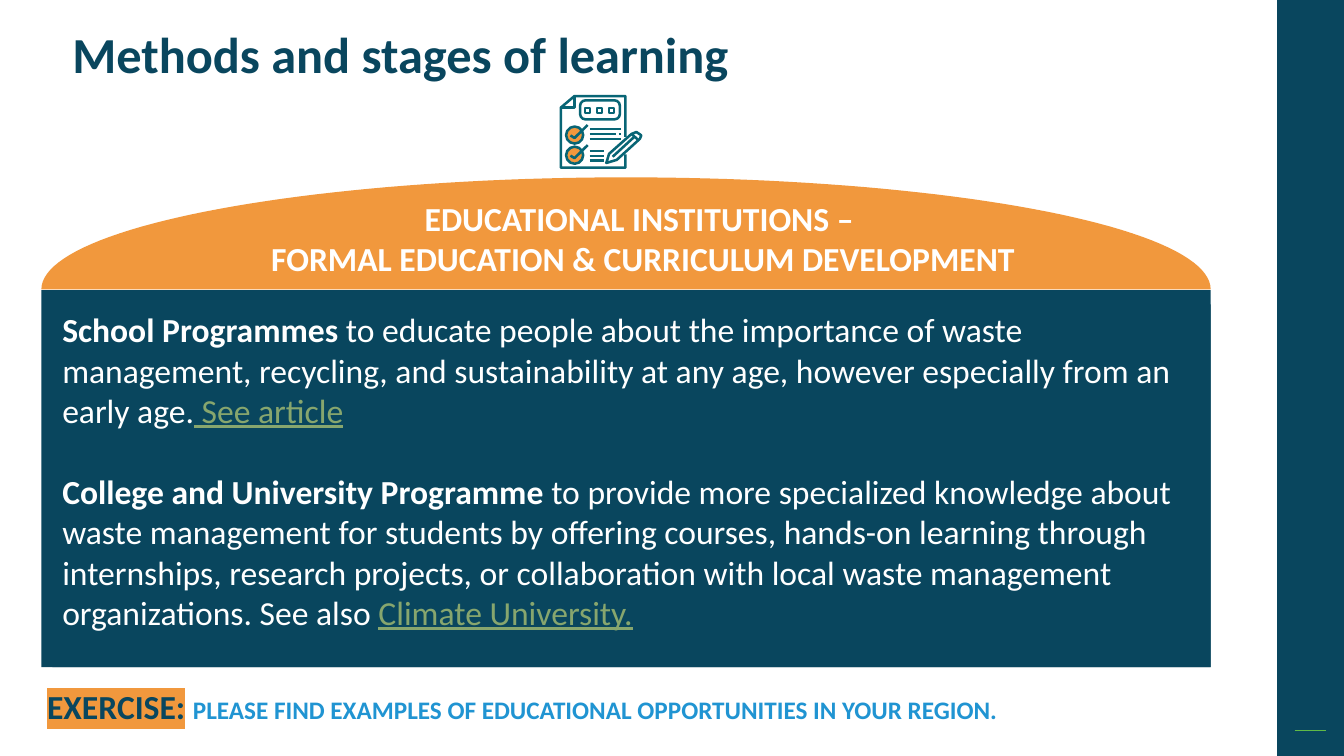
from dataclasses import dataclass
from math import cos, pi, sin

from lxml import etree
from pptx import Presentation
from pptx.dml.color import RGBColor
from pptx.enum.shapes import MSO_CONNECTOR, MSO_SHAPE
from pptx.enum.text import MSO_ANCHOR, PP_ALIGN
from pptx.oxml.ns import qn
from pptx.util import Pt

NAVY = RGBColor(0x09, 0x46, 0x5E)
ORANGE = RGBColor(0xF1, 0x98, 0x3D)
TEAL = RGBColor(0x08, 0x65, 0x75)
SAGE = RGBColor(0x87, 0xA6, 0x6E)
GREEN = RGBColor(0x60, 0xBA, 0x47)
BLUE = RGBColor(0x20, 0x94, 0xD2)
WHITE = RGBColor(0xFF, 0xFF, 0xFF)
RECT, ROUNDED, OVAL = MSO_SHAPE.RECTANGLE, MSO_SHAPE.ROUNDED_RECTANGLE, MSO_SHAPE.OVAL
STRAIGHT = MSO_CONNECTOR.STRAIGHT
LEFT, CENTER = PP_ALIGN.LEFT, PP_ALIGN.CENTER
TOP, MIDDLE = MSO_ANCHOR.TOP, MSO_ANCHOR.MIDDLE
FONT = "Calibri"
ICON_X, ICON_Y = 399.6, 67.7


@dataclass
class Span:
    text: str
    color: RGBColor = WHITE
    bold: bool = True
    size: float = 24
    underline: bool = False
    highlight: RGBColor | None = None


@dataclass
class Stroke:
    points: list[tuple[float, float]]
    closed: bool = False


def paint(sp, fill: RGBColor | None, line: RGBColor | None = None, width: float = 1.8) -> None:
    sp.shadow.inherit = False
    if fill is None:
        sp.fill.background()
    else:
        sp.fill.solid()
        sp.fill.fore_color.rgb = fill
    if line is None:
        sp.line.fill.background()
    else:
        sp.line.color.rgb = line
        sp.line.width = Pt(width)


def add_box(shapes, kind, x: float, y: float, w: float, h: float,
            fill: RGBColor | None, line: RGBColor | None = None, width: float = 1.8):
    sp = shapes.add_shape(kind, Pt(x), Pt(y), Pt(w), Pt(h))
    paint(sp, fill, line, width)
    return sp


def add_line(shapes, x1: float, y1: float, x2: float, y2: float,
             color: RGBColor, width: float) -> None:
    line = shapes.add_connector(STRAIGHT, Pt(x1), Pt(y1), Pt(x2), Pt(y2))
    line.line.color.rgb = color
    line.line.width = Pt(width)
    etree.SubElement(line._element.spPr, qn("a:effectLst"))


def add_path(shapes, points: list[tuple[float, float]], closed: bool):
    pts = [(Pt(x), Pt(y)) for x, y in points]
    builder = shapes.build_freeform(*pts[0])
    builder.add_line_segments(pts[1:], close=closed)
    return builder.convert_to_shape()


def write(sp, paragraphs: list[list[Span]], align=LEFT, anchor=TOP, gap: float = 0) -> None:
    tf = sp.text_frame
    tf.word_wrap = True
    tf.vertical_anchor = anchor
    for i, spans in enumerate(paragraphs):
        p = tf.paragraphs[0] if i == 0 else tf.add_paragraph()
        p.alignment = align
        if i and gap:
            p.space_before = Pt(gap)
        for span in spans:
            r = p.add_run()
            r.text = span.text
            r.font.size = Pt(span.size)
            r.font.bold = span.bold
            r.font.underline = span.underline
            r.font.color.rgb = span.color
            r.font.name = FONT
            if span.highlight is not None:
                mark = etree.Element(qn("a:highlight"))
                etree.SubElement(mark, qn("a:srgbClr"), val=str(span.highlight))
                r._r.rPr.find(qn("a:solidFill")).addnext(mark)


def add_text(shapes, x: float, y: float, w: float, h: float,
             paragraphs: list[list[Span]], align=LEFT, anchor=TOP):
    sp = shapes.add_textbox(Pt(x), Pt(y), Pt(w), Pt(h))
    write(sp, paragraphs, align, anchor)
    return sp


def draw_checklist(shapes) -> None:
    strokes = [
        # Page outline, folded corner
        Stroke([(47.2, 30), (47.2, 0.9), (10.8, 0.9), (1, 9.2), (1, 52), (47.2, 52), (47.2, 42.5)]),
        Stroke([(10.8, 0.9), (10.8, 9.2), (1, 9.2)]),
        # Pencil
        Stroke([(35.5, 42.2), (51.5, 28), (55, 26.6), (58.5, 29), (57.5, 31.5),
                (41, 46.5), (33.5, 48.7)], closed=True),
        Stroke([(38, 44.3), (53.5, 30)]),
        Stroke([(51.5, 28), (56, 32)]),
    ]
    # Ticked circles
    for y in (28.8, 43.2):
        add_box(shapes, OVAL, ICON_X + 4.8, ICON_Y + y - 6.1, 12.2, 12.2, ORANGE, TEAL)
        strokes.append(Stroke([(7.9, y + 0.3), (10.8, y + 2.1), (20.2, y - 7.2)]))
    for stroke in strokes:
        points = [(ICON_X + x, ICON_Y + y) for x, y in stroke.points]
        paint(add_path(shapes, points, stroke.closed), None, TEAL)
    # Header with three squares
    header = add_box(shapes, ROUNDED, ICON_X + 14.8, ICON_Y + 4, 28.4, 13.6, None, TEAL)
    header.adjustments[0] = 0.28
    for i in range(3):
        add_box(shapes, RECT, ICON_X + 18.2 + 8.6 * i, ICON_Y + 9.3, 3.8, 3.5, None, TEAL, 1.5)
    # Lines of writing
    for x, y, length in [(21.6, 24.5, 22.7), (21.6, 28.1, 18.7), (42.5, 28.1, 1.8),
                         (21.6, 31.7, 22.7), (21.6, 40, 10), (21.6, 43.5, 10), (21.6, 47, 10)]:
        x, y = ICON_X + x, ICON_Y + y
        add_line(shapes, x, y, x + length, y, TEAL, 1.6)


def main() -> None:
    prs = Presentation()
    prs.slide_width, prs.slide_height = Pt(960), Pt(540)
    s = prs.slides.add_slide(prs.slide_layouts[6])

    # Side bar
    add_box(s.shapes, RECT, 912.3, 0, 47.7, 540, NAVY)
    add_line(s.shapes, 924.7, 521.8, 947, 521.8, GREEN, 1)

    # Title
    title = add_text(s.shapes, 44.6, 18.7, 605.5, 43.9,
                     [[Span("Methods and stages of learning", NAVY, size=36)]], anchor=MIDDLE)
    title.text_frame.paragraphs[0].line_spacing = 0.9

    # Panel and dome
    add_box(s.shapes, RECT, 29.6, 207.2, 835.2, 269.4, NAVY)
    steps = 90
    arc = [(447.2 - 417.6 * cos(pi * i / steps), 206.7 - 80 * sin(pi * i / steps))
           for i in range(steps + 1)]
    paint(add_path(s.shapes, arc, True), ORANGE)
    add_text(s.shapes, 159.8, 137.5, 599, 65.5,
             [[Span("EDUCATIONAL INSTITUTIONS – ")],
              [Span("FORMAL EDUCATION & CURRICULUM DEVELOPMENT")]], CENTER)

    # Programmes
    programmes = add_box(s.shapes, RECT, 37.4, 217.4, 827.4, 259.2, NAVY)
    write(programmes, [
        [Span("School Programmes"),
         Span(" to educate people about the importance of waste management, recycling, and "
              "sustainability at any age, however especially from an early age.", bold=False),
         Span(" See article", SAGE, bold=False, underline=True)],
        [Span("College and University Programme "),
         Span("to provide more specialized knowledge about waste management for students by "
              "offering courses, hands-on learning through internships, research projects, or "
              "collaboration with local waste management organizations. See also ", bold=False),
         Span("Climate University.", SAGE, bold=False, underline=True)],
    ], gap=29)

    # Checklist icon
    draw_checklist(s.shapes.add_group_shape().shapes)

    # Exercise
    add_text(s.shapes, 26.6, 486.7, 787.7, 36, [[
        Span("EXERCISE:", NAVY, highlight=ORANGE),
        Span(" ", NAVY),
        Span("PLEASE FIND EXAMPLES OF EDUCATIONAL OPPORTUNITIES IN YOUR REGION.", BLUE, size=18),
    ]])

    prs.save("out.pptx")


if __name__ == "__main__":
    main()
